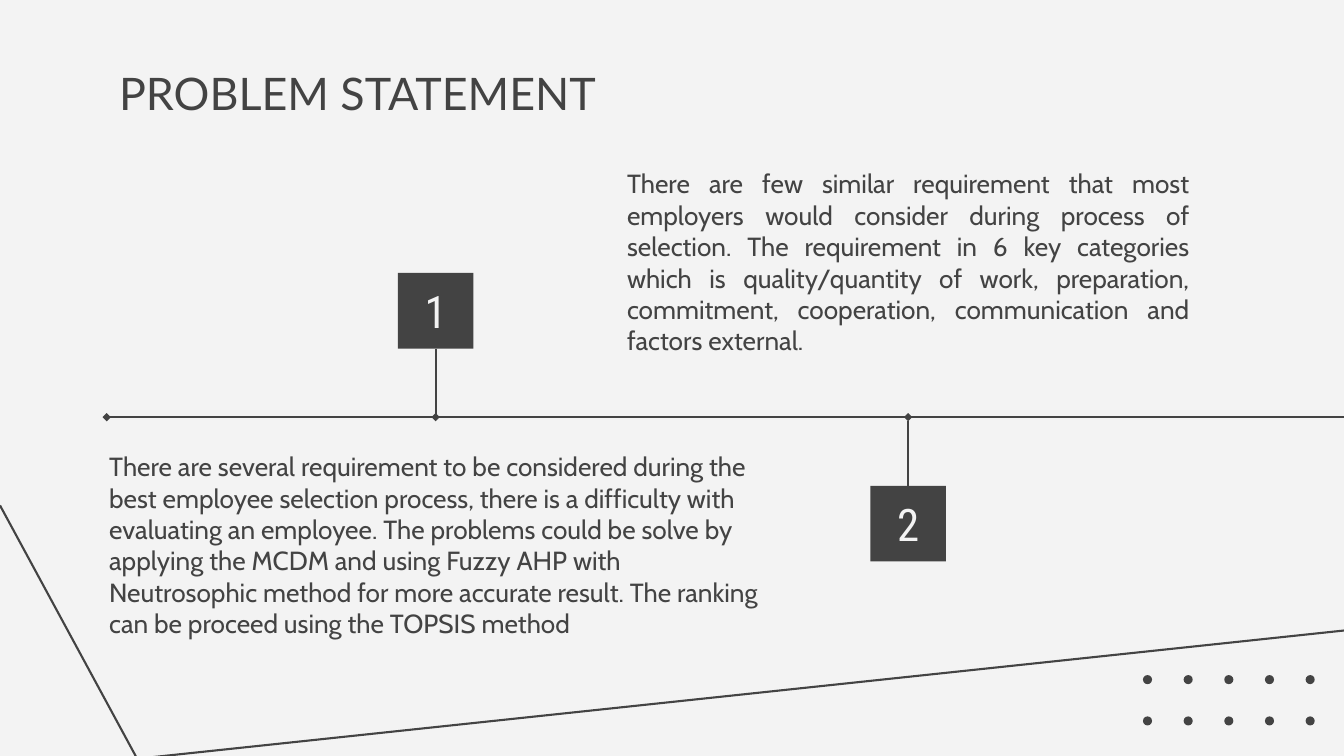
from dataclasses import dataclass

from lxml import etree
from pptx import Presentation
from pptx.dml.color import RGBColor
from pptx.enum.shapes import MSO_CONNECTOR, MSO_SHAPE
from pptx.enum.text import MSO_ANCHOR, MSO_AUTO_SIZE, PP_ALIGN
from pptx.oxml.ns import qn
from pptx.util import Pt

STRAIGHT = MSO_CONNECTOR.STRAIGHT
OVAL, RECTANGLE = MSO_SHAPE.OVAL, MSO_SHAPE.RECTANGLE
TOP, MIDDLE = MSO_ANCHOR.TOP, MSO_ANCHOR.MIDDLE
LEFT, CENTER, JUSTIFY = PP_ALIGN.LEFT, PP_ALIGN.CENTER, PP_ALIGN.JUSTIFY
NO_AUTOFIT = MSO_AUTO_SIZE.NONE
SIDE_TOP, SIDE_BOTTOM = 0, 2


@dataclass(frozen=True)
class Theme:
    """Colours, fonts and sizes in points."""
    dark: RGBColor = RGBColor(0x43, 0x43, 0x43)
    light: RGBColor = RGBColor(0xF3, 0xF3, 0xF3)
    title_font: str = "Lato"
    body_font: str = "Cabin"
    number_font: str = "Roboto Condensed"
    large: float = 32
    body: float = 18.7
    line: float = 1.5
    inset: float = 9.4


THEME = Theme()
WIDTH, HEIGHT = 960, 540
AXIS_LEFT, AXIS_Y = 76.2, 298
SQUARE, STEM = 54, 49

PROBLEM = (
    "There are several requirement to be considered during the best employee "
    "selection process, there is a difficulty with evaluating an employee. The "
    "problems could be solve by applying the MCDM and using Fuzzy AHP with "
    "Neutrosophic method for more accurate result. The ranking can be proceed "
    "using the TOPSIS method"
)
CRITERIA = (
    "There are few similar requirement that most employers would consider during "
    "process of selection. The requirement in 6 key categories which is "
    "quality/quantity of work, preparation, commitment, cooperation, "
    "communication and factors external."
)


def write_text(shape, text, font, size, color, align=LEFT, anchor=TOP):
    """Put one formatted paragraph into a shape."""
    frame = shape.text_frame
    frame.text = text
    frame.word_wrap = True
    frame.auto_size = NO_AUTOFIT
    frame.vertical_anchor = anchor
    frame.margin_left = frame.margin_right = Pt(THEME.inset)
    frame.margin_top = frame.margin_bottom = Pt(THEME.inset)
    paragraph = frame.paragraphs[0]
    paragraph.alignment = align
    run_font = paragraph.runs[0].font
    run_font.name = font
    run_font.size = Pt(size)
    run_font.color.rgb = color


def add_solid(slide, kind, left, top, size):
    """Add a dark square or dot without outline."""
    shape = slide.shapes.add_shape(kind, Pt(left), Pt(top), Pt(size), Pt(size))
    shape.shadow.inherit = False
    shape.fill.solid()
    shape.fill.fore_color.rgb = THEME.dark
    shape.line.fill.background()
    return shape


def add_line(slide, start, end, diamond_end):
    """Add a straight line with a diamond at its headEnd or tailEnd."""
    line = slide.shapes.add_connector(STRAIGHT, *map(Pt, start + end))
    line.line.color.rgb = THEME.dark
    line.line.width = Pt(THEME.line)
    properties = line._element.spPr
    outline = properties.find(qn("a:ln"))
    etree.SubElement(outline, qn(f"a:{diamond_end}"), type="diamond")
    etree.SubElement(properties, qn("a:effectLst"))
    return line


def add_dots(slide, left, top, pitch_x, pitch_y, columns=5, rows=2):
    """Add the grid of dots in the corner."""
    for row in range(rows):
        for column in range(columns):
            add_solid(slide, OVAL, left + column * pitch_x, top + row * pitch_y, 6.5)


def add_border(slide, start, corner, end):
    """Add the open bent line along the bottom of the slide."""
    builder = slide.shapes.build_freeform(Pt(start[0]), Pt(start[1]))
    builder.add_line_segments([tuple(map(Pt, corner)), tuple(map(Pt, end))], close=False)
    border = builder.convert_to_shape()
    border.shadow.inherit = False
    border.fill.background()
    border.line.color.rgb = THEME.dark
    border.line.width = Pt(THEME.line)


def add_title(slide, left, top, width, height):
    """Place and format the title."""
    title = slide.shapes.title
    title.left, title.top, title.width, title.height = map(Pt, (left, top, width, height))
    write_text(title, "PROBLEM STATEMENT", THEME.title_font, THEME.large, THEME.dark)


def add_body(slide, text, left, top, width, height, align):
    """Add one body text."""
    box = slide.shapes.add_textbox(*map(Pt, (left, top, width, height)))
    write_text(box, text, THEME.body_font, THEME.body, THEME.dark, align)
    box.text_frame.paragraphs[0].space_after = Pt(21.3)


def add_step(slide, number, center, above):
    """Add a numbered square with its stem to the axis."""
    top = AXIS_Y - STEM - SQUARE if above else AXIS_Y + STEM
    edge = AXIS_Y - STEM if above else top
    square = add_solid(slide, RECTANGLE, center - SQUARE / 2, top, SQUARE)
    write_text(square, number, THEME.number_font, THEME.large, THEME.light, CENTER, MIDDLE)
    stem = add_line(slide, (center, edge), (center, AXIS_Y), "tailEnd")
    stem.begin_connect(square, SIDE_BOTTOM if above else SIDE_TOP)


def build_problem_slide(presentation):
    """Build the problem statement slide."""
    slide = presentation.slides.add_slide(presentation.slide_layouts[5])
    slide.background.fill.solid()
    slide.background.fill.fore_color.rgb = THEME.light
    add_dots(slide, 816.4, 482.2, 29.05, 29.5)
    add_border(slide, (0, 361), (98, 542), (WIDTH, 450.4))
    add_title(slide, 75.6, 37.4, 366.5, 87.8)
    add_line(slide, (AXIS_LEFT, AXIS_Y), (WIDTH, AXIS_Y), "headEnd")
    add_step(slide, "1", 311.2, above=True)
    add_step(slide, "2", 648.7, above=False)
    add_body(slide, PROBLEM, 68.6, 312.4, 485.3, 155, LEFT)
    add_body(slide, CRITERIA, 438.5, 110.3, 420.5, 155, JUSTIFY)


def main():
    """Create and save the presentation."""
    presentation = Presentation()
    presentation.slide_width, presentation.slide_height = Pt(WIDTH), Pt(HEIGHT)
    build_problem_slide(presentation)
    presentation.save("out.pptx")


if __name__ == "__main__":
    main()
